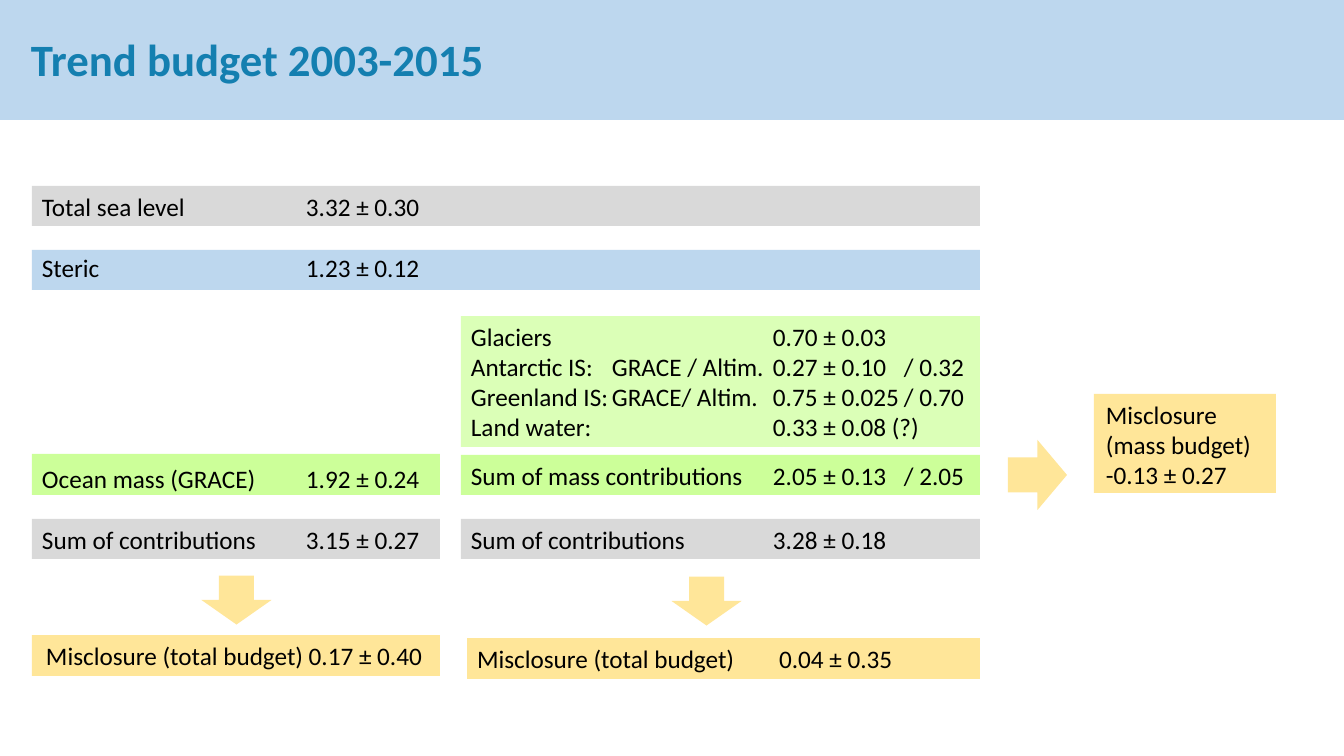
"""Build the sea level trend budget slide."""
from dataclasses import dataclass

from lxml.etree import SubElement
from pptx import Presentation
from pptx.dml.color import RGBColor
from pptx.enum.shapes import MSO_SHAPE as Shape
from pptx.enum.text import MSO_ANCHOR as Anchor, PP_ALIGN as Align
from pptx.oxml.ns import qn
from pptx.util import Pt

EMU_PER_PX = 914400 / 100.8


def px(length):
    """Turn a length in px into EMU."""
    return round(length * EMU_PER_PX)


def assign(target, values):
    """Set every attribute named in a dict of format values."""
    for name, value in values.items():
        setattr(target, name, value)


@dataclass(frozen=True)
class Theme:
    """Colours, font and type sizes."""
    font: str = "Calibri"
    title_size: int = 32
    body_size: int = 18
    title: str = "147FB0"
    ink: str = "000000"
    blue: str = "BDD7EE"
    grey: str = "D9D9D9"
    green: str = "CCFF99"
    pale_green: str = "DBFFB7"
    amber: str = "FFE699"


class BudgetSlide:
    """Hold the theme and the current page and draw elements on it."""

    def __init__(self, deck, theme):
        """Add a title-only page to the deck."""
        self.theme = theme
        self.page = deck.slides.add_slide(deck.slide_layouts[5])

    def add_span(self, para, text, size, colour, bold=False):
        """Add one formatted span to a paragraph."""
        span = para.add_run()
        span.text = text
        assign(span.font, {"name": self.theme.font, "size": Pt(size), "bold": bold})
        span.font.color.rgb = RGBColor.from_string(colour)

    def block(self, kind, frame, fill, rotation=0):
        """Draw a plain filled shape without line or shadow."""
        shape = self.page.shapes.add_shape(kind, *map(px, frame))
        shape.fill.solid()
        shape.fill.fore_color.rgb = RGBColor.from_string(fill)
        shape.line.fill.background()
        shape.shadow.inherit = False
        shape.rotation = rotation
        return shape

    def header(self, text, frame, band_frame):
        """Place the title in front of its band."""
        title = self.page.shapes.title
        band = self.block(Shape.RECTANGLE, band_frame, self.theme.blue)
        title.element.addprevious(band.element)
        assign(title, dict(zip(("left", "top", "width", "height"), map(px, frame))))
        assign(title.text_frame, {"vertical_anchor": Anchor.MIDDLE, "word_wrap": True,
                                  "margin_left": px(10)})
        para = title.text_frame.paragraphs[0]
        assign(para, {"alignment": Align.LEFT, "line_spacing": 0.9})
        self.add_span(para, text, self.theme.title_size, self.theme.title, bold=True)

    def bar(self, frame, fill, rows, stops=(), inset=(10, 5)):
        """Draw a bar whose rows align to the last of the tab stops they need."""
        box = self.block(Shape.RECTANGLE, frame, fill).text_frame
        left, top = map(px, inset)
        assign(box, {"word_wrap": True, "vertical_anchor": Anchor.TOP,
                     "margin_left": left, "margin_top": top,
                     "margin_right": 0, "margin_bottom": 0})
        for index, row in enumerate(rows):
            para = box.add_paragraph() if index else box.paragraphs[0]
            para.alignment = Align.LEFT
            used = stops if row.count("\t") == len(stops) else stops[-2:]
            if used:
                tabs = SubElement(para._p.get_or_add_pPr(), qn("a:tabLst"))
                for stop in used:
                    SubElement(tabs, qn("a:tab"), pos=str(px(stop)), algn="l")
            self.add_span(para, row, self.theme.body_size, self.theme.ink)

    def arrow(self, frame, rotation=0):
        """Draw a block arrow."""
        self.block(Shape.RIGHT_ARROW, frame, self.theme.amber, rotation)


def main():
    """Build and save the deck."""
    deck = Presentation()
    assign(deck, {"slide_width": px(1344), "slide_height": px(756)})
    theme = Theme()
    slide = BudgetSlide(deck, theme)
    slide.header("Trend budget 2003-2015", (21, -11, 859, 146), (0, -1, 1344, 121))

    left, right = 32, 461
    full_width, left_width, right_width = 948, 408, 519
    left_stops, right_stops = (264,), (141, 302, 433)

    slide.bar((left, 186, full_width, 40), theme.grey,
              ["Total sea level\t3.32 ± 0.30"], left_stops)
    slide.bar((left, 250, full_width, 40), theme.blue,
              ["Steric\t1.23 ± 0.12"], left_stops, (10, 2))
    slide.bar((left, 454, left_width, 41), theme.green,
              ["Ocean mass (GRACE)\t1.92 ± 0.24"], left_stops, (10, 9))
    slide.bar((left, 519, left_width, 40), theme.grey,
              ["Sum of contributions\t3.15 ± 0.27"], left_stops)
    slide.bar((left, 635, left_width, 41), theme.amber,
              ["Misclosure (total budget) 0.17 ± 0.40"], inset=(14, 5))

    slide.bar((right, 316, right_width, 131), theme.pale_green, [
        "Glaciers\t0.70 ± 0.03",
        "Antarctic IS:\tGRACE / Altim.\t0.27 ± 0.10\t/ 0.32",
        "Greenland IS:\tGRACE/ Altim.\t0.75 ± 0.025\t/ 0.70",
        "Land water:\t0.33 ± 0.08 (?)",
    ], right_stops)
    slide.bar((right, 455, right_width, 40), theme.green,
              ["Sum of mass contributions\t2.05 ± 0.13\t/ 2.05"], right_stops)
    slide.bar((right, 519, right_width, 40), theme.grey,
              ["Sum of contributions\t3.28 ± 0.18"], right_stops)
    slide.bar((467, 638, 513, 41), theme.amber,
              ["Misclosure (total budget)\t0.04 ± 0.35"], right_stops)
    slide.bar((1094, 394, 182, 99), theme.amber,
              ["Misclosure", "(mass budget)", "-0.13 ± 0.27"], inset=(12, 5))

    slide.arrow((1008, 440, 59, 70))
    slide.arrow((682, 566, 49, 70), 90)
    slide.arrow((212, 565, 49, 70), 90)
    deck.save("out.pptx")


if __name__ == "__main__":
    main()
